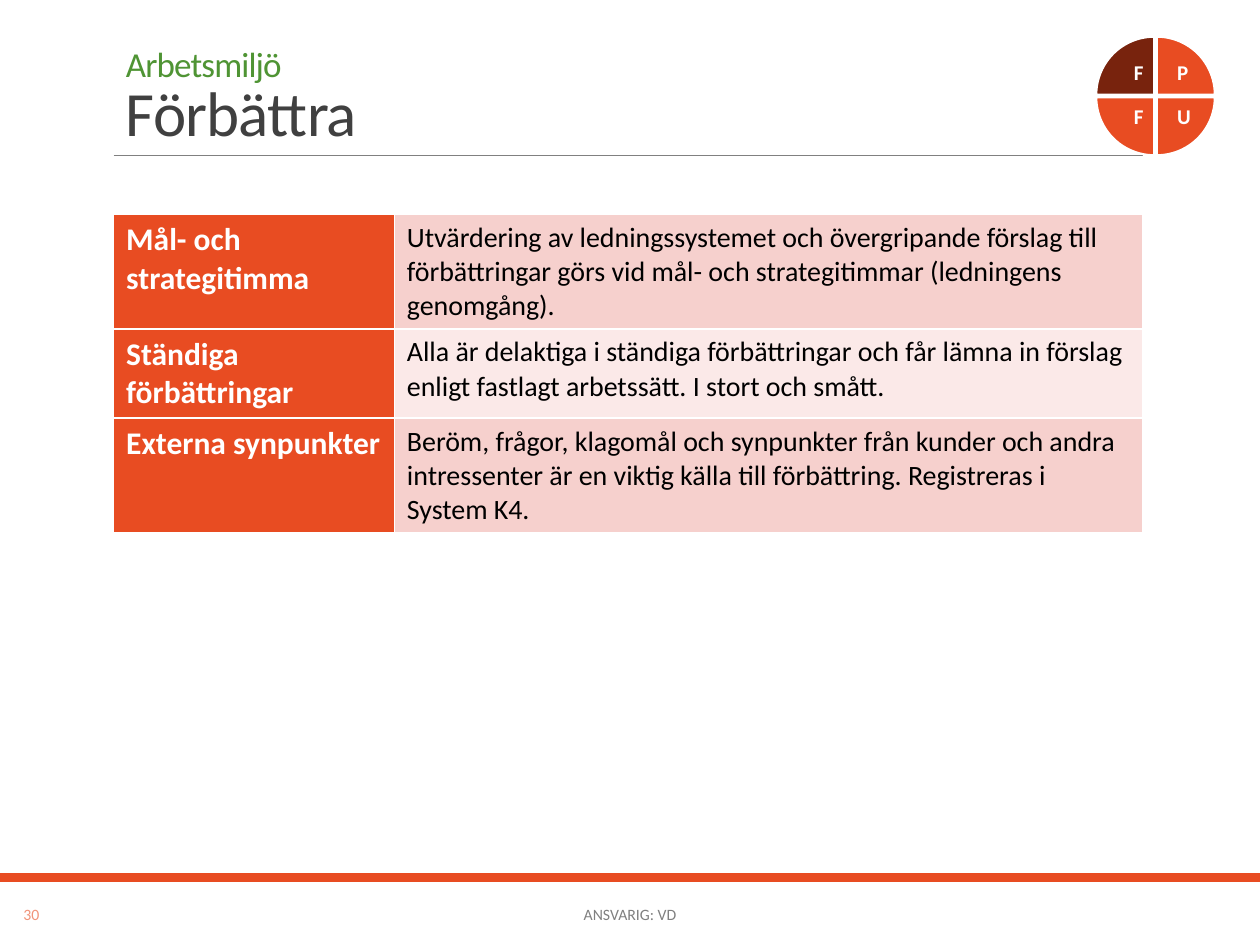
from dataclasses import dataclass

import pptx
import pptx.dml.color
import pptx.enum.shapes
import pptx.enum.text
import pptx.oxml
import pptx.oxml.ns
import pptx.util
from pptx.util import Cm

FONT = "Calibri"
ORANGE, WHITE, GREY = "E84C22", "FFFFFF", "808080"
SHAPE = pptx.enum.shapes.MSO_SHAPE
ALIGN = pptx.enum.text.PP_ALIGN
ANCHOR = pptx.enum.text.MSO_ANCHOR


@dataclass
class Wedge:
    letter: str
    col: int
    row: int
    rotation: int
    color: str = ORANGE


@dataclass
class Row:
    heading: str
    text: str
    height: float
    color: str


WEDGES = [
    Wedge("F", 0, 0, 0, "78230D"),
    Wedge("P", 1, 0, 90),
    Wedge("U", 1, 1, 180),
    Wedge("F", 0, 1, 270),
]
ROWS = [
    Row("Mål- och strategitimma",
        "Utvärdering av ledningssystemet och övergripande förslag till "
        "förbättringar görs vid mål- och strategitimmar (ledningens genomgång).",
        2.31, "F6D0CD"),
    Row("Ständiga förbättringar",
        "Alla är delaktiga i ständiga förbättringar och får lämna in förslag "
        "enligt fastlagt arbetssätt. I stort och smått.",
        1.8, "FBE9E8"),
    Row("Externa synpunkter",
        "Beröm, frågor, klagomål och synpunkter från kunder och andra intressenter "
        "är en viktig källa till förbättring. Registreras i System K4.",
        2.31, "F6D0CD"),
]


def rgb(value: str):
    return pptx.dml.color.RGBColor.from_string(value)


def set_attrs(obj, **values) -> None:
    for name, value in values.items():
        setattr(obj, name, value)


def add_run(p, text: str, size: float, color: str, bold: bool = False):
    r = p.add_run()
    r.text = text
    set_attrs(r.font, name=FONT, size=pptx.util.Pt(size), bold=bold)
    r.font.color.rgb = rgb(color)
    return r


def add_box(s, x: float, y: float, w: float, h: float, anchor=ANCHOR.MIDDLE):
    """Add a wrapping text box and return its text frame."""
    tf = s.shapes.add_textbox(Cm(x), Cm(y), Cm(w), Cm(h)).text_frame
    set_attrs(tf, word_wrap=True, vertical_anchor=anchor)
    return tf


def add_label(s, x: float, y: float, w: float, h: float, text: str,
              size: float, color: str, bold: bool = False):
    tf = add_box(s, x, y, w, h)
    p = tf.paragraphs[0]
    p.alignment = ALIGN.CENTER
    add_run(p, text, size, color, bold)
    return tf


def add_solid(s, kind, x: float, y: float, w: float, h: float, color: str):
    sp = s.shapes.add_shape(kind, Cm(x), Cm(y), Cm(w), Cm(h))
    sp.shadow.inherit = False
    sp.fill.solid()
    sp.fill.fore_color.rgb = rgb(color)
    sp.line.fill.background()
    return sp


def add_wedge(s, wedge: Wedge) -> None:
    sp = add_solid(s, SHAPE.PIE_WEDGE, 22.1 + 1.22 * wedge.col,
                   0.74 + 1.22 * wedge.row, 1.17, 1.17, wedge.color)
    sp.rotation = wedge.rotation
    sp.line.color.rgb = rgb(WHITE)
    sp.line.width = pptx.util.Pt(1.25)
    tf = add_label(s, 22.45 + 0.87 * wedge.col, 1.07 + 0.89 * wedge.row,
                   0.84, 0.84, wedge.letter, 12, WHITE, True)
    inset = Cm(0.41)
    set_attrs(tf, margin_left=inset, margin_right=inset,
              margin_top=inset, margin_bottom=inset)
    tf.paragraphs[0].line_spacing = 0.9


def fill_cell(cell, text: str, size: float, color: str, fill: str,
              bold: bool = False) -> None:
    tc_pr = cell._tc.get_or_add_tcPr()
    for side in "LRTB":
        tc_pr.append(pptx.oxml.parse_xml(
            f'<a:ln{side} {pptx.oxml.ns.nsdecls("a")} w="12700"><a:solidFill>'
            f'<a:srgbClr val="{WHITE}"/></a:solidFill></a:ln{side}>'))
    cell.fill.solid()
    cell.fill.fore_color.rgb = rgb(fill)
    add_run(cell.text_frame.paragraphs[0], text, size, color, bold)


def add_measures(s) -> None:
    widths = (5.66, 15.08)
    height = sum(row.height for row in ROWS)
    table = s.shapes.add_table(len(ROWS), len(widths), Cm(2.29), Cm(4.32),
                               Cm(sum(widths)), Cm(height)).table
    for column, width in zip(table.columns, widths):
        column.width = Cm(width)
    for i, row in enumerate(ROWS):
        table.rows[i].height = Cm(row.height)
        fill_cell(table.cell(i, 0), row.heading, 18, WHITE, ORANGE, True)
        fill_cell(table.cell(i, 1), row.text, 16, "000000", row.color)


def main() -> None:
    prs = pptx.Presentation()
    set_attrs(prs, slide_width=Cm(25.4), slide_height=Cm(19.05))
    s = prs.slides.add_slide(prs.slide_layouts[6])

    # Footer bar and title rule
    add_solid(s, SHAPE.RECTANGLE, 0, 17.6, 25.4, 0.18, ORANGE)
    rule = s.shapes.add_connector(pptx.enum.shapes.MSO_CONNECTOR.STRAIGHT,
                                  Cm(2.29), Cm(3.13), Cm(23.04), Cm(3.13))
    rule.line.color.rgb = rgb(GREY)
    rule.line.width = pptx.util.Pt(0.5)
    rule._element.spPr.append(pptx.oxml.parse_xml(
        f'<a:effectLst {pptx.oxml.ns.nsdecls("a")}/>'))

    # Title
    p = add_box(s, 2.29, 0.79, 20.96, 2.34, ANCHOR.BOTTOM).paragraphs[0]
    p.line_spacing = 0.85
    topic = add_run(p, "Arbetsmiljö ", 20, "4F9434")
    p.add_line_break()
    heading = add_run(p, "Förbättra", 36, "404040")
    for r in (topic, heading):
        r._r.get_or_add_rPr().set("spc", "-50")

    # Table
    add_measures(s)

    # Cycle wheel
    for wedge in WEDGES:
        add_wedge(s, wedge)

    # Footer
    add_label(s, 0.1, 17.93, 1.07, 1.02, "30", 9, "F1947A")
    add_label(s, 7.67, 17.93, 10.06, 1.02, "ANSVARIG: VD", 9, GREY)

    prs.save("out.pptx")


if __name__ == "__main__":
    main()
